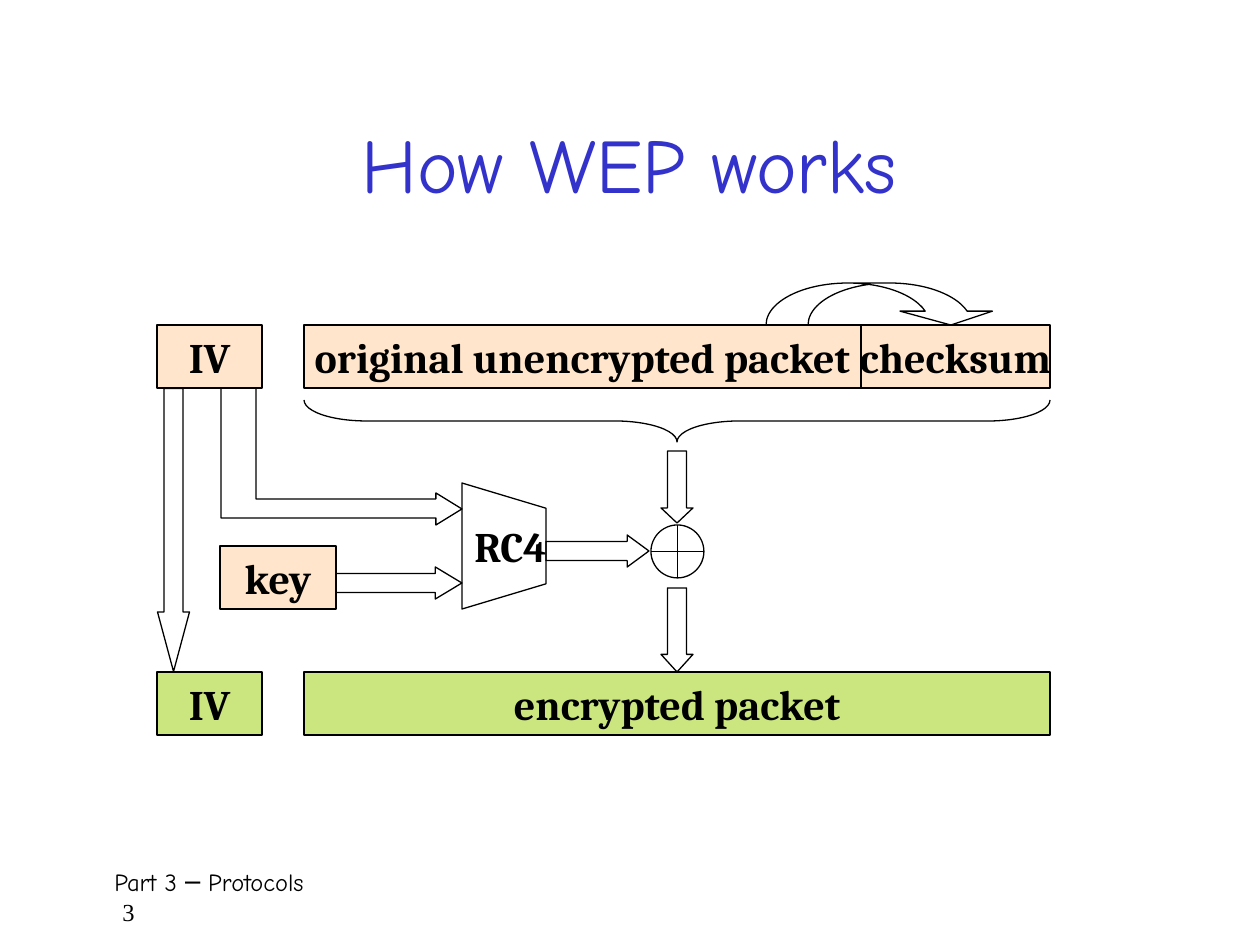
"""Build the slide that shows how WEP encrypts a packet."""
from lxml.etree import SubElement
from pptx import Presentation
from pptx.dml.color import RGBColor
from pptx.enum.shapes import MSO_SHAPE as Preset
from pptx.enum.text import MSO_ANCHOR as Anchor, PP_ALIGN as Align
from pptx.oxml.ns import qn
from pptx.util import Emu, Pt

SCALE = 914400 / 126
BLACK = RGBColor(0x00, 0x00, 0x00)
BLUE = RGBColor(0x33, 0x33, 0xCC)
PEACH = RGBColor(0xFF, 0xCC, 0x99)
GREEN = RGBColor(0x99, 0xCC, 0x00)
TITLE_FONT = {"name": "Comic Neue", "size": Pt(44)}
LABEL_FONT = {"name": "Cambria", "size": Pt(24), "bold": True}


def px(*lengths):
    return [Emu(round(length * SCALE)) for length in lengths]


def write(paragraph, text, font_format, color):
    paragraph.text = text
    for attribute, value in font_format.items():
        setattr(paragraph.font, attribute, value)
    paragraph.font.color.rgb = color


deck = Presentation()
deck.slide_width, deck.slide_height = px(1260, 945)
slide = deck.slides.add_slide(deck.slide_layouts[5])
shapes = slide.shapes

title = shapes.title
title.left, title.top, title.width, title.height = px(94, 84, 1071, 158)
title.text_frame.vertical_anchor = Anchor.MIDDLE
title_line = title.text_frame.paragraphs[0]
write(title_line, "How WEP works", TITLE_FONT, BLUE)
title_line.alignment = Align.CENTER

footer = shapes.add_textbox(*px(94, 861, 1081, 63)).text_frame
footer.word_wrap = True
footer_lines = [("Part 3 ─ Protocols", "Comic Neue", 8), ("3", "Times New Roman", 16)]
for index, (text, font_name, indent) in enumerate(footer_lines):
    line = footer.add_paragraph() if index else footer.paragraphs[0]
    write(line, text, {"name": font_name, "size": Pt(14)}, BLACK)
    line._p.get_or_add_pPr().set("marL", str(px(indent)[0]))

iv_arrow = shapes.build_freeform(462, 509, scale=SCALE)
iv_arrow.add_line_segments([
    (436, 493), (436, 499), (256, 499), (256, 388),
    (221, 388), (221, 518), (436, 518), (436, 525),
])
outlines = [iv_arrow.convert_to_shape()]

symbols = [
    (Preset.RIGHT_ARROW, (336, 567, 126, 32), 0, (0.6, 0.83)),
    (Preset.RIGHT_ARROW, (546, 535, 103, 32), 0, (0.6, 0.68)),
    (Preset.RIGHT_ARROW, (32, 514, 283, 32), 90, (0.6, 1.86)),
    (Preset.RIGHT_BRACE, (656, 48, 42, 746), 90, (1.48, 0.5)),
    (Preset.RIGHT_ARROW, (635, 614, 84, 32), 90, (0.6, 0.55)),
    (Preset.FLOWCHART_OR, (651, 525, 53, 53), 0, ()),
    (Preset.RIGHT_ARROW, (641, 471, 72, 32), 90, (0.6, 0.47)),
    (Preset.CURVED_DOWN_ARROW, (766, 283, 231, 42), 0, (1.1, 2.2, 0.33)),
]
for preset, box, rotation, adjustments in symbols:
    symbol = shapes.add_shape(preset, *px(*box))
    symbol.rotation = rotation
    for index, value in enumerate(adjustments):
        symbol.adjustments[index] = value
    outlines.append(symbol)

blocks = [
    ("IV", Preset.RECTANGLE, (157, 325, 105, 63), PEACH),
    ("RC4", Preset.FLOWCHART_MANUAL_OPERATION, (441, 504, 126, 84), None),
    ("key", Preset.RECTANGLE, (220, 546, 116, 63), PEACH),
    ("IV", Preset.RECTANGLE, (157, 672, 105, 63), GREEN),
    ("encrypted packet", Preset.RECTANGLE, (304, 672, 746, 63), GREEN),
    ("original unencrypted packet", Preset.RECTANGLE, (304, 325, 557, 63), PEACH),
    ("checksum", Preset.RECTANGLE, (861, 325, 189, 63), PEACH),
]
for label, preset, box, color in blocks:
    block = shapes.add_shape(preset, *px(*box))
    frame = block.text_frame
    frame.word_wrap = False
    frame.vertical_anchor = Anchor.MIDDLE
    write(frame.paragraphs[0], label, LABEL_FONT, BLACK)
    frame.paragraphs[0].alignment = Align.CENTER
    if color is None:
        block.rotation = 270
        frame._txBody.bodyPr.set("vert", "eaVert")
    else:
        block.fill.solid()
        block.fill.fore_color.rgb = color
        tint = block._element.spPr.find(qn("a:solidFill"))[0]
        SubElement(tint, qn("a:alpha"), val="50000")
    outlines.append(block)

for outline in outlines:
    outline.shadow.inherit = False
    outline.line.color.rgb = BLACK
    outline.line.width = Pt(0.75)
    if outline._element.spPr.find(qn("a:solidFill")) is None:
        outline.fill.background()

deck.save("out.pptx")
